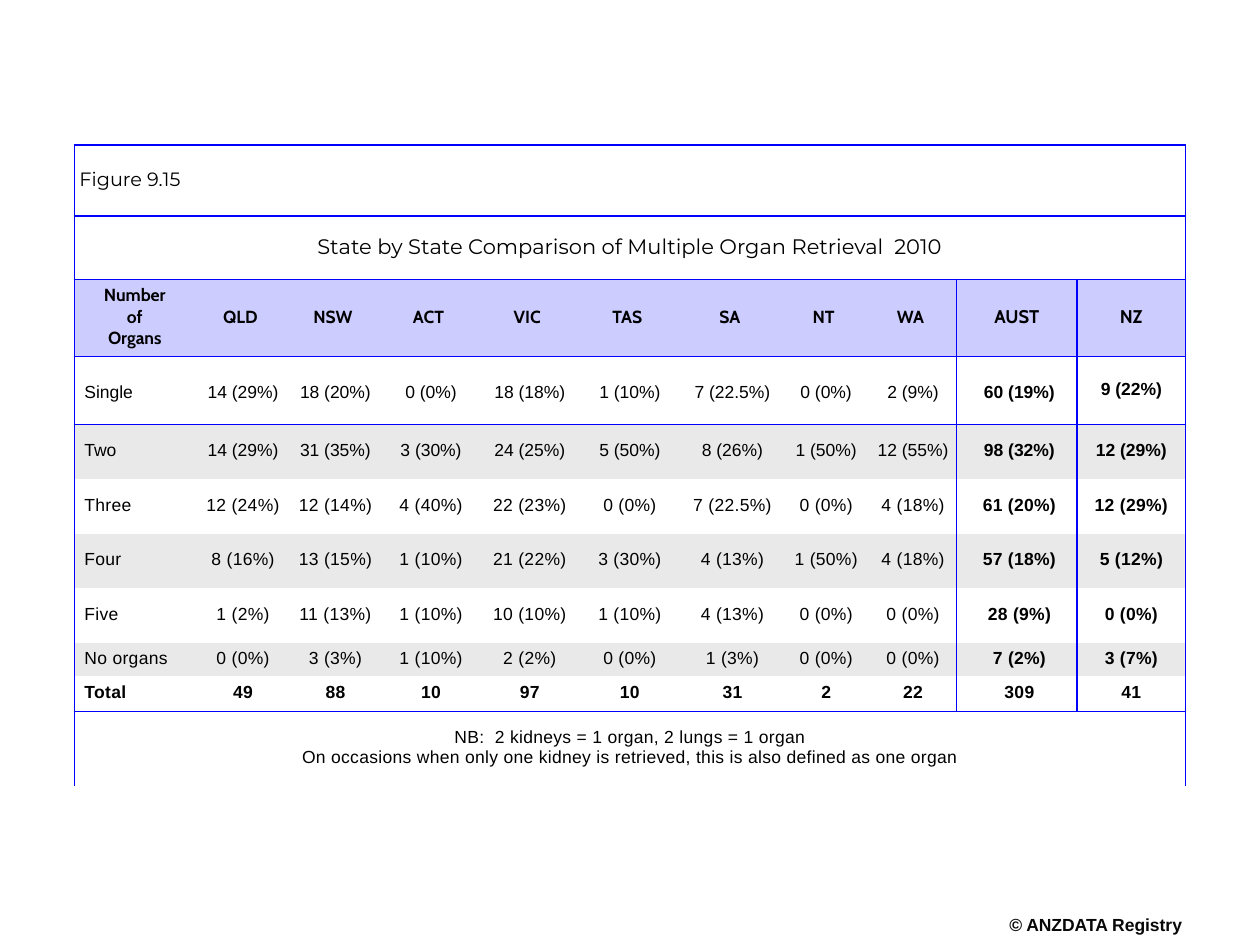
"""Builds a slide with a state by state table of multiple organ retrieval."""
from lxml import etree
from pptx import Presentation
from pptx.dml.color import RGBColor
from pptx.enum import text
from pptx.oxml import ns
from pptx.util import Pt

COLORS = {"ink": "000000", "credit": "080808", "rule": "0000FF",
          "head": "CCCCFF", "band": "E9E9E9"}
COL_WIDTHS = [69.1, 51.8, 54, 55.4, 57.6, 56.9, 60.5, 46.8, 52.6, 69.1, 61.9]
ROW_HEIGHTS = [41, 36.7, 44.6, 39.4, 31.5, 31.5, 31.5, 31.5, 19.4, 20.2, 43.2]
HEADINGS = ["Number\nof\nOrgans", "QLD", "NSW", "ACT", "VIC", "TAS", "SA",
            "NT", "WA", "AUST", "NZ"]
ROWS = [
    ["Single", "14 (29%)", "18 (20%)", "0 (0%)", "18 (18%)", "1 (10%)",
     "7 (22.5%)", "0 (0%)", "2 (9%)", "60 (19%)", "9 (22%)"],
    ["Two", "14 (29%)", "31 (35%)", "3 (30%)", "24 (25%)", "5 (50%)",
     "8 (26%)", "1 (50%)", "12 (55%)", "98 (32%)", "12 (29%)"],
    ["Three", "12 (24%)", "12 (14%)", "4 (40%)", "22 (23%)", "0 (0%)",
     "7 (22.5%)", "0 (0%)", "4 (18%)", "61 (20%)", "12 (29%)"],
    ["Four", "8 (16%)", "13 (15%)", "1 (10%)", "21 (22%)", "3 (30%)",
     "4 (13%)", "1 (50%)", "4 (18%)", "57 (18%)", "5 (12%)"],
    ["Five", "1 (2%)", "11 (13%)", "1 (10%)", "10 (10%)", "1 (10%)",
     "4 (13%)", "0 (0%)", "0 (0%)", "28 (9%)", "0 (0%)"],
    ["No organs", "0 (0%)", "3 (3%)", "1 (10%)", "2 (2%)", "0 (0%)",
     "1 (3%)", "0 (0%)", "0 (0%)", "7 (2%)", "3 (7%)"],
    ["Total", "49", "88", "10", "97", "10", "31", "2", "22", "309", "41"],
]
NOTE = ("NB:  2 kidneys = 1 organ, 2 lungs = 1 organ\n"
        "On occasions when only one kidney is retrieved, "
        "this is also defined as one organ")


def write(tf, content, size=10, font="Arial", bold=False, centered=True,
          color="ink", tracking=0, spacing=0.85):
    """Fill a text frame with one paragraph per line of content."""
    for i, line in enumerate(content.split("\n")):
        p = tf.add_paragraph() if i else tf.paragraphs[0]
        r = p.add_run()
        r.text = line
        p.alignment = text.PP_ALIGN.CENTER if centered else text.PP_ALIGN.LEFT
        p.line_spacing = spacing
        p.space_before = Pt(2 if i else 0)
        p.font.size, p.font.name, p.font.bold = Pt(size), font, bold
        p.font.color.rgb = RGBColor.from_string(COLORS[color])
        if tracking:
            r.font.size = Pt(size)
            r.font._element.set("spc", str(tracking))


def style_cell(cell, edges, margins, fill=None):
    """Set the ruled edges, margins (left, top, right, bottom) and fill."""
    tc_pr = cell._tc.get_or_add_tcPr()
    for edge in "LRTB":
        if edge in edges:
            ln = etree.SubElement(tc_pr, ns.qn("a:ln" + edge), w=str(Pt(1)))
            solid = etree.SubElement(ln, ns.qn("a:solidFill"))
            etree.SubElement(solid, ns.qn("a:srgbClr"), val=COLORS["rule"])
    (cell.margin_left, cell.margin_top,
     cell.margin_right, cell.margin_bottom) = map(Pt, margins)
    cell.vertical_anchor = text.MSO_ANCHOR.MIDDLE
    if fill:
        cell.fill.solid()
        cell.fill.fore_color.rgb = RGBColor.from_string(COLORS[fill])
    else:
        cell.fill.background()


def add_spanning_row(table, row, content, edges, margins, **style):
    """Merge a whole row and write its text."""
    cell = table.cell(row, 0)
    cell.merge(table.cell(row, len(COL_WIDTHS) - 1))
    style_cell(cell, edges, margins)
    write(cell.text_frame, content, **style)


def column_edges(col):
    """Return the vertical rules of a column."""
    return ("L" if col in (0, 9, 10) else "") + ("R" if col >= 8 else "")


def add_heading_row(table, row):
    """Write the column headings."""
    for col, heading in enumerate(HEADINGS):
        cell = table.cell(row, col)
        side = 2.9 if col == 10 else 5.8
        style_cell(cell, column_edges(col) + "TB", (side, 2.9, side, 2.9), "head")
        write(cell.text_frame, heading, 10.5 if col >= 9 else 10, "Cabin", True)


def add_body_rows(table, first):
    """Write the counts, with a band behind every second row."""
    last = len(ROWS) - 1
    for i, values in enumerate(ROWS):
        rules = "T" if i == 0 else "B" if i == last else ""
        for col, value in enumerate(values):
            cell = table.cell(first + i, col)
            margins = (2.9 if col == 10 else 5.8,
                       5.8 if i == 0 and col < 10 else 2.9, 2.9, 2.9)
            style_cell(cell, column_edges(col) + rules, margins,
                       "band" if i % 2 else None)
            write(cell.text_frame, value, bold=i == last or col >= 9,
                  centered=col > 0, tracking=20 if i >= 2 else 0,
                  spacing=0.75 if i == last and col >= 3 else 0.85)


def add_retrieval_table(s, left, top, width, height):
    """Place the whole table in the given box."""
    frame = s.shapes.add_table(len(ROW_HEIGHTS), len(COL_WIDTHS), Pt(left),
                               Pt(top), Pt(width), Pt(height))
    table = frame.table
    table.first_row = table.horz_banding = False
    style_id = next(frame._element.iter(ns.qn("a:tableStyleId")))
    style_id.text = "{2D5ABB26-0587-4C30-8999-92F81FD0307C}"
    for column, size in zip(table.columns, COL_WIDTHS):
        column.width = Pt(size * width / sum(COL_WIDTHS))
    for row, size in zip(table.rows, ROW_HEIGHTS):
        row.height = Pt(size * height / sum(ROW_HEIGHTS))
    add_spanning_row(table, 0, "Figure 9.15", "LRTB", (2.9, 1.4, 2.9, 1.4),
                     size=11, font="Montserrat", centered=False)
    add_spanning_row(
        table, 1, "State by State Comparison of Multiple Organ Retrieval  2010",
        "LRTB", (5.8, 5.8, 5.8, 5.8), size=12, font="Montserrat")
    add_heading_row(table, 2)
    add_body_rows(table, 3)
    add_spanning_row(table, 10, NOTE, "LRT", (2.9, 5.8, 2.9, 5.8), tracking=20)


def add_credit(s, left, top, width, height):
    """Place the copyright line in the given box."""
    tf = s.shapes.add_textbox(Pt(left), Pt(top), Pt(width), Pt(height)).text_frame
    tf.margin_left = tf.margin_top = tf.margin_right = tf.margin_bottom = 0
    tf.word_wrap = False
    tf.auto_size = text.MSO_AUTO_SIZE.SHAPE_TO_FIT_TEXT
    write(tf, "© ANZDATA Registry", bold=True, color="credit")


def main():
    """Build and save the slide."""
    prs = Presentation()
    prs.slide_width, prs.slide_height = Pt(720), Pt(540)
    s = prs.slides.add_slide(prs.slide_layouts[6])
    add_credit(s, 575.3, 524.2, 101.5, 12.2)
    add_retrieval_table(s, 42.5, 82.8, 635, 366.5)
    prs.save("out.pptx")


if __name__ == "__main__":
    main()
